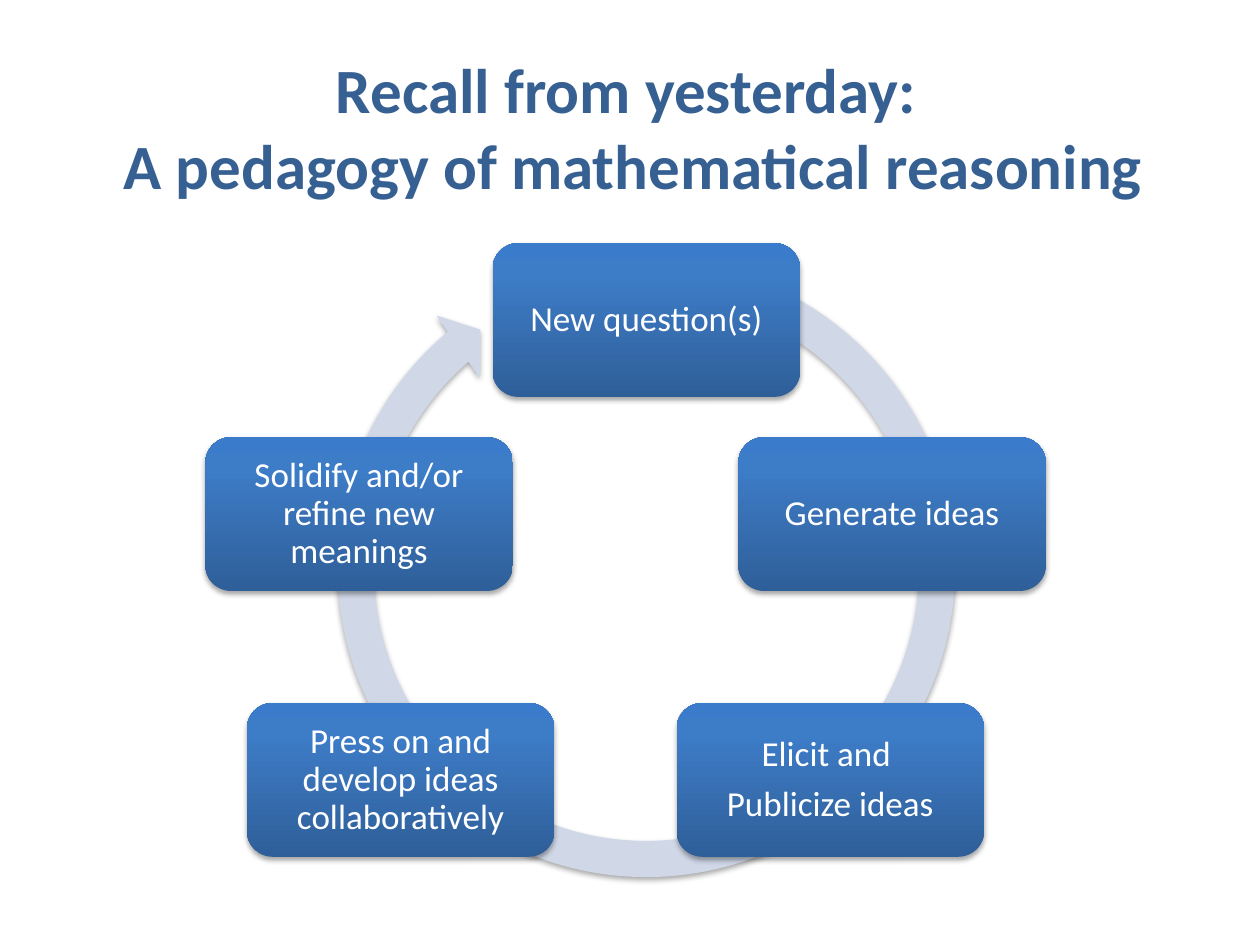
from copy import deepcopy

from lxml import etree
from pptx import Presentation
from pptx import util as u
from pptx.dml import color
from pptx.enum import shapes, text
from pptx.oxml import ns

FONT = "Calibri"
CENTER_X = 5.13
BOX_WIDTH, BOX_HEIGHT = 2.44, 1.22
GRADIENT = [(0, "2F5F99"), (0.8, "3D7CC7"), (1, "3A7CCB")]
STEPS = [
    (0, 1.93, ["New question(s)"]),
    (1.95, 3.47, ["Generate ideas"]),
    (1.46, 5.58, ["Elicit and ", "Publicize ideas"]),
    (-1.95 + 0.24, 5.58, ["Press on and develop ideas collaboratively"]),
    (-2.28, 3.47, ["Solidify and/or refine new meanings"]),
]
STEPS[3] = (-1.95, *STEPS[3][1:])
STEPS = [
    (0, 1.93, ["New question(s)"]),
    (1.95, 3.47, ["Generate ideas"]),
    (1.46, 5.58, ["Elicit and ", "Publicize ideas"]),
    (-1.95, 5.58, ["Press on and develop ideas collaboratively"]),
    (-2.28, 3.47, ["Solidify and/or refine new meanings"]),
]


def rgb(value):
    return color.RGBColor.from_string(value)


def add_span(para, words, size, shade, bold=False):
    span = para.add_run()
    span.text = words
    span.font.name = FONT
    span.font.size = u.Pt(size)
    span.font.bold = bold
    span.font.color.rgb = rgb(shade)


def add_shadow(shape):
    shape.shadow.inherit = False
    effects = shape._element.spPr.find(ns.qn("a:effectLst"))
    shadow = etree.SubElement(effects, ns.qn("a:outerShdw"), blurRad=str(u.Pt(3.1)),
                              dist=str(u.Pt(1.8)), dir="5400000", rotWithShape="0")
    shade = etree.SubElement(shadow, ns.qn("a:srgbClr"), val="000000")
    etree.SubElement(shade, ns.qn("a:alpha"), val="35000")


def fill_gradient(shape):
    shape.fill.gradient()
    shape.fill.gradient_angle = 90
    stops = shape._element.spPr.find(".//" + ns.qn("a:gsLst"))
    stops.append(deepcopy(stops[-1]))
    for stop, (position, shade) in zip(shape.fill.gradient_stops, GRADIENT):
        stop.position = position
        stop.color.rgb = rgb(shade)


def add_title(page):
    title = page.shapes.title
    title.left, title.top = u.Inches(0.63), u.Inches(0.3)
    title.width, title.height = u.Inches(8.79), u.Inches(1.41)
    frame = title.text_frame
    frame.auto_size = text.MSO_AUTO_SIZE.NONE
    frame.vertical_anchor = text.MSO_ANCHOR.MIDDLE
    para = frame.paragraphs[0]
    para.alignment = text.PP_ALIGN.CENTER
    add_span(para, "Recall from yesterday: ", 36, "376092", True)
    para.add_line_break()
    add_span(para, "A pedagogy of mathematical reasoning", 36, "376092", True)


def add_cycle_arrow(page):
    size = 5.22
    arrow = page.shapes.add_shape(
        shapes.MSO_SHAPE.CIRCULAR_ARROW, u.Inches(CENTER_X - size / 2), u.Inches(1.9),
        u.Inches(size), u.Inches(size))
    for index, value in enumerate([0.055, 3.307, 137.788, 173.842, 0.058]):
        arrow.adjustments[index] = value
    arrow.fill.solid()
    arrow.fill.fore_color.rgb = rgb("D0D8E8")
    arrow.line.fill.background()
    add_shadow(arrow)


def add_step(page, left, top, lines):
    box = page.shapes.add_shape(
        shapes.MSO_SHAPE.ROUNDED_RECTANGLE, u.Inches(left), u.Inches(top),
        u.Inches(BOX_WIDTH), u.Inches(BOX_HEIGHT))
    fill_gradient(box)
    box.line.fill.background()
    add_shadow(box)
    frame = box.text_frame
    frame.word_wrap = True
    frame.vertical_anchor = text.MSO_ANCHOR.MIDDLE
    frame.margin_left = frame.margin_right = u.Inches(0.14)
    frame.margin_top = frame.margin_bottom = u.Inches(0.14)
    for index, words in enumerate(lines):
        para = frame.add_paragraph() if index else frame.paragraphs[0]
        para.alignment = text.PP_ALIGN.CENTER
        para.line_spacing = 0.9
        para.space_after = u.Pt(7)
        add_span(para, words, 20, "FFFFFF")


def main():
    deck = Presentation()
    deck.slide_width, deck.slide_height = u.Inches(10), u.Inches(7.5)
    page = deck.slides.add_slide(deck.slide_layouts[5])
    add_title(page)
    add_cycle_arrow(page)
    for offset, top, lines in STEPS:
        add_step(page, CENTER_X + offset - BOX_WIDTH / 2, top, lines)
    deck.save("out.pptx")


if __name__ == "__main__":
    main()
